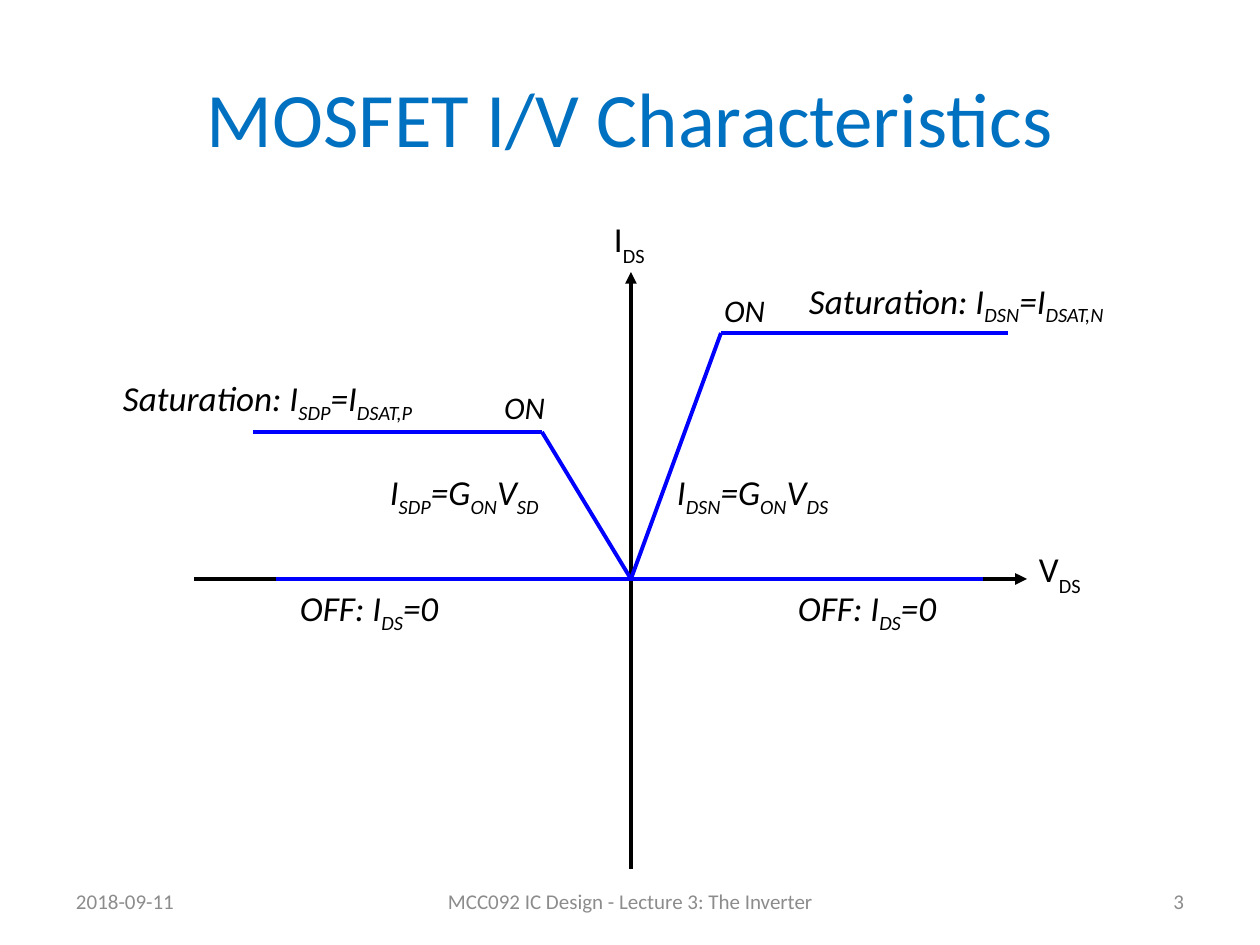
"""Build the MOSFET I/V characteristics slide."""
from lxml import etree
from pptx import Presentation
from pptx.dml.color import RGBColor
from pptx.enum.shapes import MSO_CONNECTOR
from pptx.enum.text import MSO_ANCHOR, PP_ALIGN
from pptx.oxml.ns import qn
from pptx.util import Emu, Pt

LEFT, CENTER, RIGHT = PP_ALIGN.LEFT, PP_ALIGN.CENTER, PP_ALIGN.RIGHT
MIDDLE, TOP = MSO_ANCHOR.MIDDLE, MSO_ANCHOR.TOP
STRAIGHT = MSO_CONNECTOR.STRAIGHT

PX = 914400 // 126
FONT = "Calibri"
BLACK, BLUE, TITLE_BLUE, GRAY = "000000", "0000FF", "0070C0", "8C8C8C"

TITLE = "MOSFET I/V Characteristics"
FOOTERS = [
    ("2018-09-11", 63, 294, LEFT),
    ("MCC092 IC Design - Lecture 3: The Inverter", 431, 399, CENTER),
    ("3", 903, 294, RIGHT),
]
ORIGIN = (631, 579)
AXES = [((631, 869), (631, 272)), ((194, 579), (1027, 579))]
N_KNEE, P_KNEE = (721, 333), (542, 432)
CURVES = [
    (ORIGIN, N_KNEE),
    (N_KNEE, (1008, 333)),
    (ORIGIN, (983, 579)),
    ((276, 579), ORIGIN),
    (P_KNEE, ORIGIN),
    ((253, 432), P_KNEE),
]
AXIS_LABELS = [("V|DS", (1031, 544, 88, 64)), ("I|DS", (606, 214, 81, 98))]
REGION_LABELS = [
    ("I|DSN|=G|ON|V|DS", (669, 467, 241, 49)),
    ("I|SDP|=G|ON|V|SD", (382, 467, 241, 49)),
    ("Saturation: I|DSN|=I|DSAT,N", (801, 275, 433, 77)),
    ("Saturation: I|SDP|=I|DSAT,P", (115, 373, 433, 77)),
    ("OFF: I|DS|=0", (790, 583, 194, 77)),
    ("OFF: I|DS|=0", (292, 583, 194, 77)),
]
ON_LABELS = [("ON", (711, 285, 68, 50)), ("ON", (491, 382, 68, 50))]


def px(*lengths):
    return [Emu(length * PX) for length in lengths]


def rgb(color):
    return RGBColor.from_string(color)


def style(font, size, color, italic=False):
    font.name, font.size, font.italic = FONT, Pt(size), italic
    font.color.rgb = rgb(color)


def add_line(slide, start, end, color, arrow=False):
    line = slide.shapes.add_connector(STRAIGHT, *px(*start, *end))
    line.line.color.rgb = rgb(color)
    line.line.width = Pt(2.25)
    if arrow:
        etree.SubElement(line.line._get_or_add_ln(), qn("a:tailEnd"), type="triangle")
    etree.SubElement(line._element.spPr, qn("a:effectLst"))


def add_label(slide, text, box, size, color=BLACK, italic=False, align=LEFT,
              anchor=TOP, insets=(8, 4), wrap=True, subscript=-25):
    """Add text in which every second part between bars is a subscript."""
    frame = slide.shapes.add_textbox(*px(*box)).text_frame
    frame.word_wrap, frame.vertical_anchor = wrap, anchor
    frame.margin_left = frame.margin_right = px(insets[0])[0]
    frame.margin_top = frame.margin_bottom = px(insets[1])[0]
    paragraph = frame.paragraphs[0]
    paragraph.alignment = align
    for index, part in enumerate(text.split("|")):
        run = paragraph.add_run()
        run.text = part
        style(run.font, size, color, italic)
        if index % 2:
            run.font._element.set("baseline", str(subscript * 1000))


def main():
    deck = Presentation()
    deck.slide_width, deck.slide_height = px(1260, 945)
    slide = deck.slides.add_slide(deck.slide_layouts[5])

    title = slide.shapes.title
    title.left, title.top, title.width, title.height = px(63, 38, 1134, 157)
    title.text_frame.text = TITLE
    title.text_frame.vertical_anchor = MIDDLE
    heading = title.text_frame.paragraphs[0]
    heading.alignment = CENTER
    style(heading.runs[0].font, 44, TITLE_BLUE)

    for text, left, width, align in FOOTERS:
        add_label(slide, text, (left, 876, width, 50), 12, GRAY,
                  align=align, anchor=MIDDLE, insets=(13, 6))
    for start, end in AXES:
        add_line(slide, start, end, BLACK, arrow=True)
    for start, end in CURVES:
        add_line(slide, start, end, BLUE)
    for text, box in AXIS_LABELS:
        add_label(slide, text, box, 20, subscript=-30)
    for text, box in REGION_LABELS:
        add_label(slide, text, box, 20, italic=True)
    for text, box in ON_LABELS:
        add_label(slide, text, box, 18, italic=True, insets=(13, 6), wrap=False)

    deck.save("out.pptx")


if __name__ == "__main__":
    main()
